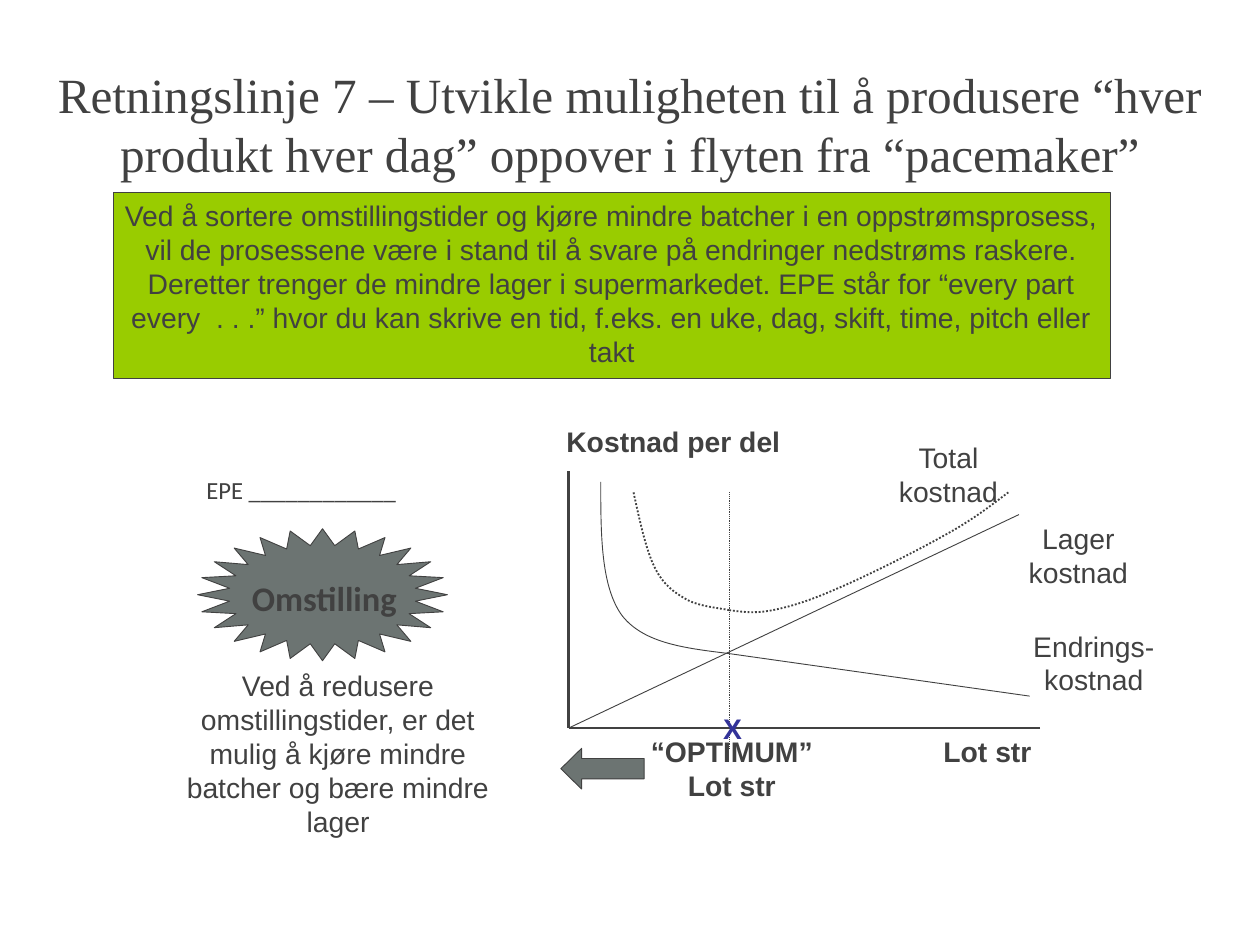
from lxml import etree
from pptx import Presentation
from pptx import util as u
from pptx.dml.color import RGBColor
from pptx.enum import dml, shapes, text
from pptx.oxml.ns import qn

INK, GREY, GREEN, BLUE = "414141", "6C7472", "99CC00", "333399"
DOT = dml.MSO_LINE.ROUND_DOT


def rgb(value):
    return RGBColor.from_string(value)


def style_line(line, width, dash=None):
    line.color.rgb = rgb(INK)
    line.width = u.Pt(width)
    if dash:
        line.dash_style = dash


def write(tf, lines, size=23, font="Arial", color=INK, bold=False, inset=(0, 0),
          anchor=text.MSO_ANCHOR.TOP, wrap=True):
    """Fill a text frame with centred paragraphs; inset is (sides, top and bottom)."""
    tf.word_wrap = wrap
    tf.vertical_anchor = anchor
    tf.margin_left = tf.margin_right = u.Inches(inset[0])
    tf.margin_top = tf.margin_bottom = u.Inches(inset[1])
    for i, line in enumerate(lines):
        p = tf.add_paragraph() if i else tf.paragraphs[0]
        p.alignment = text.PP_ALIGN.CENTER
        r = p.add_run()
        r.text = line
        r.font.size, r.font.name, r.font.bold = u.Pt(size), font, bold
        r.font.color.rgb = rgb(color)


def add_label(s, box, *lines, **look):
    tb = s.shapes.add_textbox(*map(u.Inches, box))
    write(tb.text_frame, lines, **look)
    tb.text_frame.auto_size = text.MSO_AUTO_SIZE.SHAPE_TO_FIT_TEXT


def add_block(s, kind, box, fill):
    sp = s.shapes.add_shape(kind, *map(u.Inches, box))
    sp.shadow.inherit = False
    sp.fill.solid()
    sp.fill.fore_color.rgb = rgb(fill)
    style_line(sp.line, 0.75)
    return sp


def add_line(s, x1, y1, x2, y2, width=0.75, dash=None):
    c = s.shapes.add_connector(shapes.MSO_CONNECTOR.STRAIGHT,
                               *map(u.Inches, (x1, y1, x2, y2)))
    style_line(c.line, width, dash)
    etree.SubElement(c._element.spPr, qn("a:effectLst"))


def add_curve(s, x, y, knots, width=0.75, dash=None):
    """Draw joined cubic Béziers; knots are a start, then three points per piece."""
    emu = [(u.Inches(x + px), u.Inches(y + py)) for px, py in knots]
    fb = s.shapes.build_freeform(*emu[0])
    fb.add_line_segments(emu[1:], close=False)
    sp = fb.convert_to_shape()
    segments = list(sp._element.iter(qn("a:lnTo")))
    for k in range(0, len(segments), 3):
        bend, *others = segments[k:k + 3]
        bend.tag = qn("a:cubicBezTo")
        for other in others:
            bend.append(other[0])
            other.getparent().remove(other)
    sp.shadow.inherit = False
    sp.fill.background()
    style_line(sp.line, width, dash)


def add_title(s, box):
    sp = s.shapes.title
    sp.left, sp.top, sp.width, sp.height = map(u.Inches, box)
    write(sp.text_frame,
          ["Retningslinje 7 – Utvikle muligheten til å produsere “hver produkt "
           "hver dag” oppover i flyten fra “pacemaker”"],
          size=40, font="Times New Roman", inset=(0.06, 0.06),
          anchor=text.MSO_ANCHOR.MIDDLE)


def add_guideline(s, box):
    sp = add_block(s, shapes.MSO_SHAPE.RECTANGLE, box, GREEN)
    write(sp.text_frame,
          ["Ved å sortere omstillingstider og kjøre mindre batcher i en "
           "oppstrømsprosess, vil de prosessene være i stand til å svare på "
           "endringer nedstrøms raskere. Deretter trenger de mindre lager i "
           "supermarkedet. EPE står for “every part every  . . .” hvor du kan "
           "skrive en tid, f.eks. en uke, dag, skift, time, pitch eller takt"],
          inset=(0.07, 0.07))


def add_changeover(s, x, y):
    burst = add_block(s, shapes.MSO_SHAPE.STAR_24_POINT,
                      (x + 0.53, y + 0.61, 2.82, 1.49), GREY)
    burst.adjustments[0] = 0.375
    add_label(s, (x, y, 3.4, 0.34), "EPE ____________", size=20, font="Calibri")
    add_label(s, (x + 1.03, y + 1.16, 1.86, 0.47), "Omstilling",
              size=28, font="Calibri", bold=True)
    add_label(s, (x + 0.14, y + 2.12, 3.95, 2.08),
              "Ved å redusere omstillingstider, er det mulig å kjøre mindre "
              "batcher og bære mindre lager", inset=(0.15, 0.07))


def add_cost_graph(s, x, y, w, h):
    """Draw the lot-size cost graph with its axes filling the given box."""
    optimum, base = x + 1.81, y + h
    add_line(s, x, y, x, base, 2.25)
    add_line(s, x + w, base, x, base, 2.25)
    add_line(s, x, base, x + 5.08, y + 0.49)

    add_curve(s, x, y, [(0.36, 0.12), (0.36, 0.71), (0.36, 1.3), (0.6, 1.63),
                        (0.85, 1.95), (1.33, 2), (1.81, 2.06)])
    add_line(s, optimum, y + 2.06, x + 5.2, y + 2.54)

    total_falling = [(0.73, 0.24), (0.8, 0.56), (0.87, 0.89), (0.97, 1.09),
                     (1.07, 1.29), (1.19, 1.37), (1.33, 1.45),
                     (1.47, 1.53), (1.73, 1.55), (1.81, 1.57)]
    total_rising = [(1.81, 1.57), (1.96, 1.59), (2.1, 1.61), (2.3, 1.57),
                    (2.5, 1.53), (2.7, 1.47), (3.02, 1.33),
                    (3.35, 1.19), (3.91, 0.91), (4.23, 0.73),
                    (4.56, 0.55), (4.76, 0.39), (4.96, 0.24)]
    for knots in (total_falling, total_rising):
        add_curve(s, x, y, knots, 1.5, DOT)
    add_line(s, optimum, y + 0.24, optimum, base + 0.24, dash=DOT)

    add_label(s, (x + 0.77, base + 0.07, 2.14, 0.77), "“OPTIMUM”", "Lot str", bold=True)
    add_label(s, (x - 0.06, y - 0.53, 2.48, 0.39), "Kostnad per del", bold=True)
    add_label(s, (x + 4.9, y + 1.78, 2.05, 0.77), "Endrings-", "kostnad")
    add_label(s, (x + 4.94, y + 0.57, 1.62, 0.77), "Lager kostnad")
    add_label(s, (x + 3.63, y - 0.35, 1.31, 0.77), "Total", "kostnad")
    arrow = add_block(s, shapes.MSO_SHAPE.LEFT_ARROW,
                      (x - 0.09, base + 0.23, 0.94, 0.46), GREY)
    arrow.adjustments[1] = 0.51
    add_label(s, (x + 1.59, base - 0.26, 0.51, 0.53), "X", color=BLUE, bold=True,
              inset=(0.15, 0.07), wrap=False)
    add_label(s, (x + 3.98, base + 0.07, 1.49, 0.39), "Lot str", bold=True)


def main():
    prs = Presentation()
    prs.slide_width, prs.slide_height = u.Inches(14.22), u.Inches(10.67)
    s = prs.slides.add_slide(prs.slide_layouts[5])
    add_title(s, (0.39, 0.06, 13.44, 2.67))
    add_changeover(s, 1.7, 5.36)
    add_cost_graph(s, 6.42, 5.32, 5.32, 2.9)
    add_guideline(s, (1.28, 2.17, 11.25, 2.1))
    prs.save("out.pptx")


if __name__ == "__main__":
    main()
